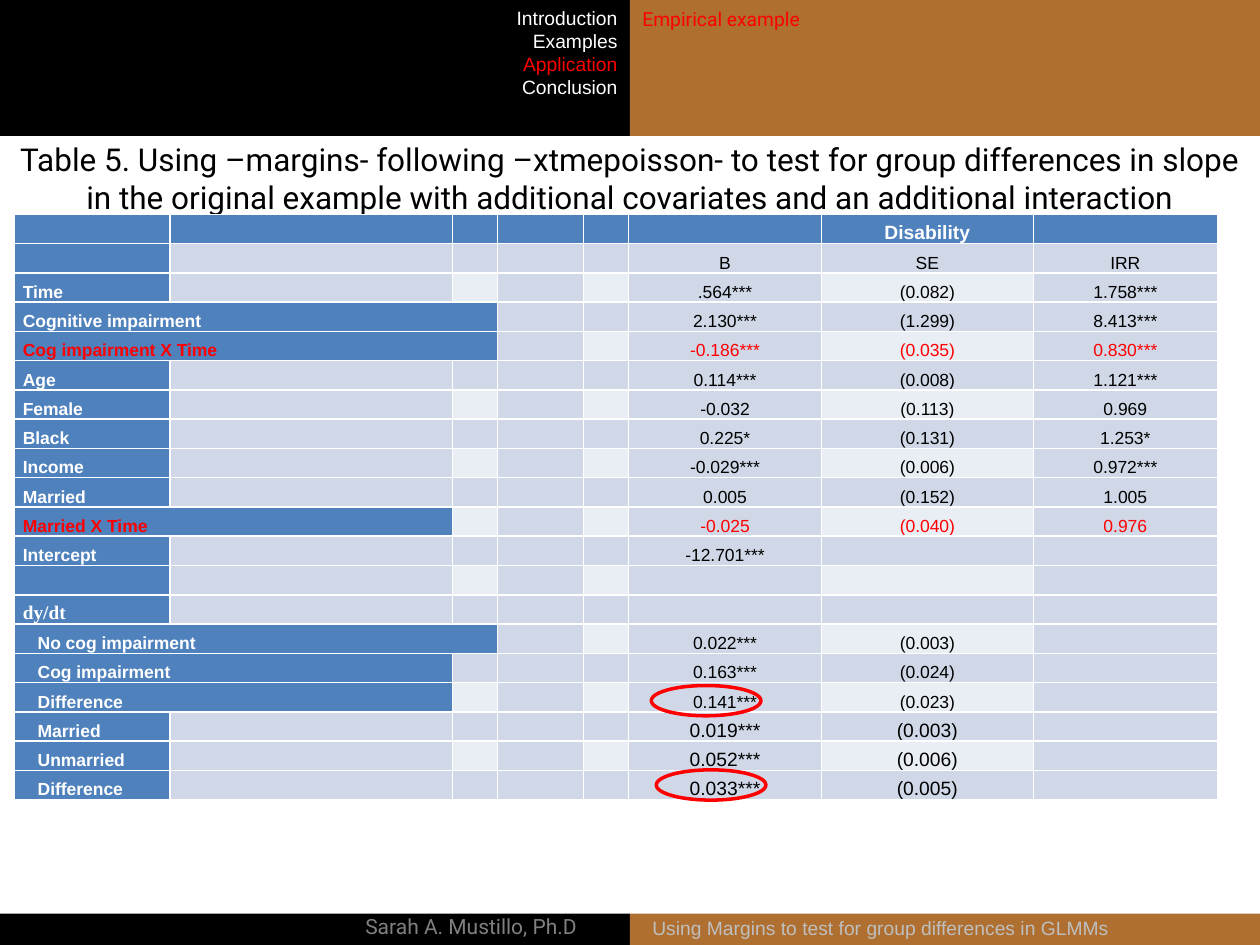
"""Build the regression table slide with its navigation header and footer."""
from dataclasses import dataclass

from pptx import Presentation
from pptx.dml.color import RGBColor
from pptx.enum.shapes import MSO_SHAPE
from pptx.enum.text import MSO_ANCHOR, MSO_AUTO_SIZE, PP_ALIGN
from pptx.util import Cm, Pt

LEFT, CENTER, RIGHT = PP_ALIGN.LEFT, PP_ALIGN.CENTER, PP_ALIGN.RIGHT
MIDDLE, BOTTOM = MSO_ANCHOR.MIDDLE, MSO_ANCHOR.BOTTOM
RECTANGLE, OVAL = MSO_SHAPE.RECTANGLE, MSO_SHAPE.OVAL
NO_AUTOFIT = MSO_AUTO_SIZE.NONE

COLORS = {
    "black": "000000", "white": "FFFFFF", "red": "FF0000", "brown": "AE6F30",
    "gray": "808080", "silver": "BFBFBF",
    "blue": "4F81BD", "band": "D0D8E8", "light": "E9EDF4",
}
COLUMN_WIDTHS = (3.15, 5.69, 0.91, 1.73, 0.91, 3.89, 4.27, 3.71)
ROW_HEIGHT = 0.59
LIGHT_COLUMNS = (2, 4, 6)
FIRST_VALUE_COLUMN = 5


@dataclass(frozen=True)
class Style:
    size: int = 10
    color: str = "black"
    name: str = "Arial"
    bold: bool = False
    align: PP_ALIGN = LEFT


@dataclass(frozen=True)
class Box:
    left: float
    top: float
    width: float
    height: float

    def lengths(self) -> tuple:
        return Cm(self.left), Cm(self.top), Cm(self.width), Cm(self.height)


@dataclass(frozen=True)
class Row:
    label: str = ""
    values: tuple = ("", "", "")
    span: int = 1
    color: str = ""
    indent: float = 0
    size: int = 10
    label_style: Style = Style(color="white", bold=True)


HEADER = Style(11, "white", bold=True, align=CENTER)
ROWS = (
    Row(values=("", "Disability", "")),
    Row(values=("B", "SE", "IRR")),
    Row("Time", (".564***", "(0.082)", "1.758***")),
    Row("Cognitive impairment", ("2.130***", "(1.299)", "8.413***"), 3),
    Row("Cog impairment X Time", ("-0.186***", "(0.035)", "0.830***"), 3, "red"),
    Row("Age", ("0.114***", "(0.008)", "1.121***")),
    Row("Female", ("-0.032", "(0.113)", "0.969")),
    Row("Black", ("0.225*", "(0.131)", "1.253*")),
    Row("Income", ("-0.029***", "(0.006)", "0.972***")),
    Row("Married", ("0.005", "(0.152)", "1.005")),
    Row("Married X Time", ("-0.025", "(0.040)", "0.976"), 2, "red"),
    Row("Intercept", ("-12.701***", "", "")),
    Row(),
    Row("dy/dt", label_style=Style(11, "white", "Times New Roman", True)),
    Row("No cog impairment", ("0.022***", "(0.003)", ""), 3, indent=0.3),
    Row("Cog impairment", ("0.163***", "(0.024)", ""), 2, indent=0.3),
    Row("Difference", ("0.141***", "(0.023)", ""), 2, indent=0.3),
    Row("Married", ("0.019***", "(0.003)", ""), indent=0.3, size=11),
    Row("Unmarried", ("0.052***", "(0.006)", ""), indent=0.3, size=11),
    Row("Difference", ("0.033***", "(0.005)", ""), indent=0.3, size=11),
)


def rgb(color: str) -> RGBColor:
    return RGBColor.from_string(COLORS[color])


def write(p, text: str, style: Style) -> None:
    p.alignment = style.align
    fonts = [p.font]
    if text:
        r = p.add_run()
        r.text = text
        fonts.append(r.font)
    else:
        p._p.get_or_add_endParaRPr().set("sz", str(style.size * 100))
    for font in fonts:
        font.size, font.name, font.bold = Pt(style.size), style.name, style.bold
        font.color.rgb = rgb(style.color)


def add_text(s, box: Box, lines: list[tuple[str, Style]], right: float = 0.25) -> None:
    tf = s.shapes.add_textbox(*box.lengths()).text_frame
    tf.word_wrap = True
    tf.margin_right = Cm(right)
    for i, (text, style) in enumerate(lines):
        write(tf.add_paragraph() if i else tf.paragraphs[0], text, style)


def add_band(s, box: Box, color: str) -> None:
    sp = s.shapes.add_shape(RECTANGLE, *box.lengths())
    sp.shadow.inherit = False
    sp.fill.solid()
    sp.fill.fore_color.rgb = rgb(color)
    sp.line.fill.background()


def add_ring(s, box: Box) -> None:
    sp = s.shapes.add_shape(OVAL, *box.lengths())
    sp.shadow.inherit = False
    sp.fill.background()
    sp.line.color.rgb = rgb("red")
    sp.line.width = Pt(2)


def cell_color(i: int, j: int) -> str:
    if i == 0 or j == 0:
        return "blue"
    return "light" if i >= 2 and i % 2 == 0 and j in LIGHT_COLUMNS else "band"


def add_results(s, left: float, top: float) -> None:
    box = Box(left, top, sum(COLUMN_WIDTHS), ROW_HEIGHT * len(ROWS))
    table = s.shapes.add_table(len(ROWS), len(COLUMN_WIDTHS), *box.lengths()).table
    table.first_col = True
    for column, width in zip(table.columns, COLUMN_WIDTHS):
        column.width = Cm(width)
    for i, row in enumerate(ROWS):
        table.rows[i].height = Cm(ROW_HEIGHT)
        label = row.label_style
        if row.color:
            label = Style(color=row.color, bold=True)
        value = Style(row.size, row.color or "black", align=CENTER) if i else HEADER
        texts = (row.label, *[""] * (FIRST_VALUE_COLUMN - 1), *row.values)
        for j, text in enumerate(texts):
            cell = table.cell(i, j)
            cell.fill.solid()
            cell.fill.fore_color.rgb = rgb(cell_color(i, j))
            cell.vertical_anchor = BOTTOM
            cell.margin_top = cell.margin_bottom = 0
            cell.margin_left = Cm(0.18 + (0 if j else row.indent))
            cell.margin_right = Cm(0.18)
            write(cell.text_frame.paragraphs[0], text, value if j else label)
        if row.span > 1:
            table.cell(i, 0).merge(table.cell(i, row.span - 1))


def add_title(s, box: Box, text: str) -> None:
    sp = s.shapes.title
    sp.left, sp.top, sp.width, sp.height = box.lengths()
    tf = sp.text_frame
    tf.word_wrap = True
    tf.auto_size = NO_AUTOFIT
    tf.vertical_anchor = MIDDLE
    write(tf.paragraphs[0], text, Style(18, name="Roboto", align=CENTER))


def main() -> None:
    prs = Presentation()
    prs.slide_width, prs.slide_height = Cm(25.4), Cm(19.05)
    s = prs.slides.add_slide(prs.slide_layouts[5])
    for top, height in ((0, 2.74), (18.42, 0.63)):
        for left, color in ((0, "black"), (12.7, "brown")):
            add_band(s, Box(left, top, 12.7, height), color)
    add_title(s, Box(0, 2.74, 25.4, 1.7),
              "Table 5. Using –margins- following –xtmepoisson- to test for group "
              "differences in slope in the original example with additional "
              "covariates and an additional interaction")
    nav = [(text, Style(11, "red" if text == "Application" else "white", align=RIGHT))
           for text in ("Introduction", "Examples", "Application", "Conclusion")]
    add_text(s, Box(0.28, 0, 12.42, 2.13), nav)
    add_text(s, Box(12.7, 0.03, 12.7, 0.74),
             [("Empirical example", Style(11, "red", "Roboto"))])
    add_text(s, Box(0, 18.29, 12.7, 0.76),
             [("Sarah A. Mustillo, Ph.D", Style(12, "gray", "Roboto", align=RIGHT))],
             right=1.07)
    add_text(s, Box(12.9, 18.34, 12.19, 0.74),
             [("Using Margins to test for group differences in GLMMs",
               Style(11, "silver"))])
    add_results(s, 0.28, 4.32)
    for left, top in ((13.23, 15.52), (13.13, 13.82)):
        add_ring(s, Box(left, top, 2.21, 0.61))
    prs.save("out.pptx")


if __name__ == "__main__":
    main()
